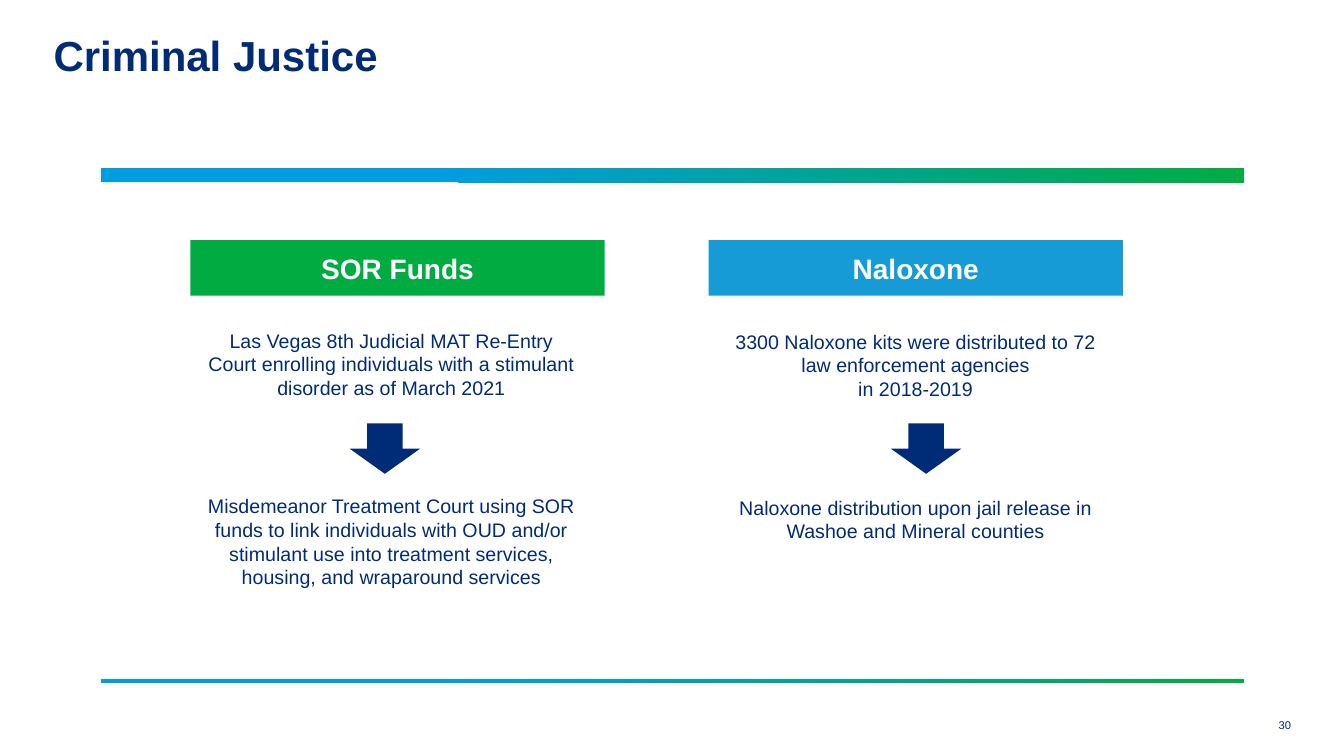
from pptx import Presentation
from pptx.dml.color import RGBColor
from pptx.enum.shapes import MSO_SHAPE
from pptx.enum.text import MSO_ANCHOR, PP_ALIGN
from pptx.util import Cm, Pt

NAVY, GREEN, BLUE, SKY, WHITE = "002C77", "00AC41", "179BD7", "009DE0", "FFFFFF"


def rgb(value):
    """Turn a hex string into a colour."""
    return RGBColor.from_string(value)


def apply(target, formats):
    """Set every attribute named in a dict of format values."""
    for name, value in formats.items():
        setattr(target, name, value)


class Deck:
    """Hold the style and the current slide."""

    font = "Arial"

    def __init__(self):
        """Open a wide presentation with one titled slide."""
        self.prs = Presentation()
        apply(self.prs, {"slide_width": Cm(33.87), "slide_height": Cm(19.05)})
        self.s = self.prs.slides.add_slide(self.prs.slide_layouts[5])

    def fill_text(self, sp, lines, size, color=NAVY, bold=False, inset=0,
                  anchor=MSO_ANCHOR.TOP, **paragraph):
        """Fill a shape with formatted paragraphs."""
        tf = sp.text_frame
        margins = ("margin_left", "margin_top", "margin_right", "margin_bottom")
        apply(tf, {"word_wrap": True, "vertical_anchor": anchor})
        apply(tf, dict.fromkeys(margins, Cm(inset)))
        tf.text = "\n".join(lines)
        for p in tf.paragraphs:
            apply(p, paragraph)
            for r in p.runs:
                apply(r.font, {"name": self.font, "size": Pt(size), "bold": bold})
                r.font.color.rgb = rgb(color)

    def title(self, text, box):
        """Place and format the title placeholder."""
        sp = self.s.shapes.title
        apply(sp, dict(zip(("left", "top", "width", "height"), map(Cm, box))))
        self.fill_text(sp, [text], 30, bold=True, alignment=PP_ALIGN.LEFT,
                       line_spacing=0.8)

    def text(self, lines, box, size, **paragraph):
        """Add a text box."""
        sp = self.s.shapes.add_textbox(*map(Cm, box))
        self.fill_text(sp, lines, size, **paragraph)

    def shape(self, kind, box, color):
        """Add a borderless shape with a solid fill."""
        sp = self.s.shapes.add_shape(kind, *map(Cm, box))
        sp.shadow.inherit = False
        sp.line.fill.background()
        sp.fill.solid()
        sp.fill.fore_color.rgb = rgb(color)
        return sp

    def header(self, text, box, color):
        """Add a coloured column header."""
        sp = self.shape(MSO_SHAPE.RECTANGLE, box, color)
        self.fill_text(sp, [text], 20, WHITE, True, 0.13, MSO_ANCHOR.MIDDLE,
                       alignment=PP_ALIGN.CENTER)

    def bar(self, box):
        """Add a bar that fades from blue to green."""
        fill = self.shape(MSO_SHAPE.RECTANGLE, box, SKY).fill
        fill.gradient()
        fill.gradient_angle = 45
        for stop, position, color in zip(fill.gradient_stops, (0.3, 1), (SKY, GREEN)):
            stop.position = position
            stop.color.rgb = rgb(color)


def main():
    """Build the slide and save it."""
    deck = Deck()
    deck.title("Criminal Justice", (1.35, 0.99, 31.17, 1.37))
    deck.text(["30"], (31.75, 18.11, 0.79, 0.33), 8, alignment=PP_ALIGN.RIGHT)
    columns = [
        ("SOR Funds", GREEN, 4.8, 5.23, 8.28, 8.81, [
            "Las Vegas 8th Judicial MAT Re-Entry Court enrolling individuals "
            "with a stimulant disorder as of March 2021",
            "Misdemeanor Treatment Court using SOR funds to link individuals "
            "with OUD and/or stimulant use into treatment services, housing, "
            "and wraparound services"]),
        ("Naloxone", BLUE, 17.86, 18.44, 8.31, 22.45, [
            "3300 Naloxone kits were distributed to 72 law enforcement "
            "agencies\vin 2018-2019",
            "Naloxone distribution upon jail release in Washoe and Mineral "
            "counties"]),
    ]
    for name, color, left, text_left, text_top, arrow_left, lines in columns:
        deck.text(lines, (text_left, text_top, 9.27, 6.68), 14,
                  alignment=PP_ALIGN.CENTER, space_after=Pt(68))
        deck.header(name, (left, 6.05, 10.44, 1.4), color)
        deck.shape(MSO_SHAPE.DOWN_ARROW, (arrow_left, 10.67, 1.78, 1.27), NAVY)
    for top, height in ((4.24, 0.36), (17.12, 0.08)):
        deck.bar((2.54, top, 28.8, height))
    deck.prs.save("out.pptx")


if __name__ == "__main__":
    main()
